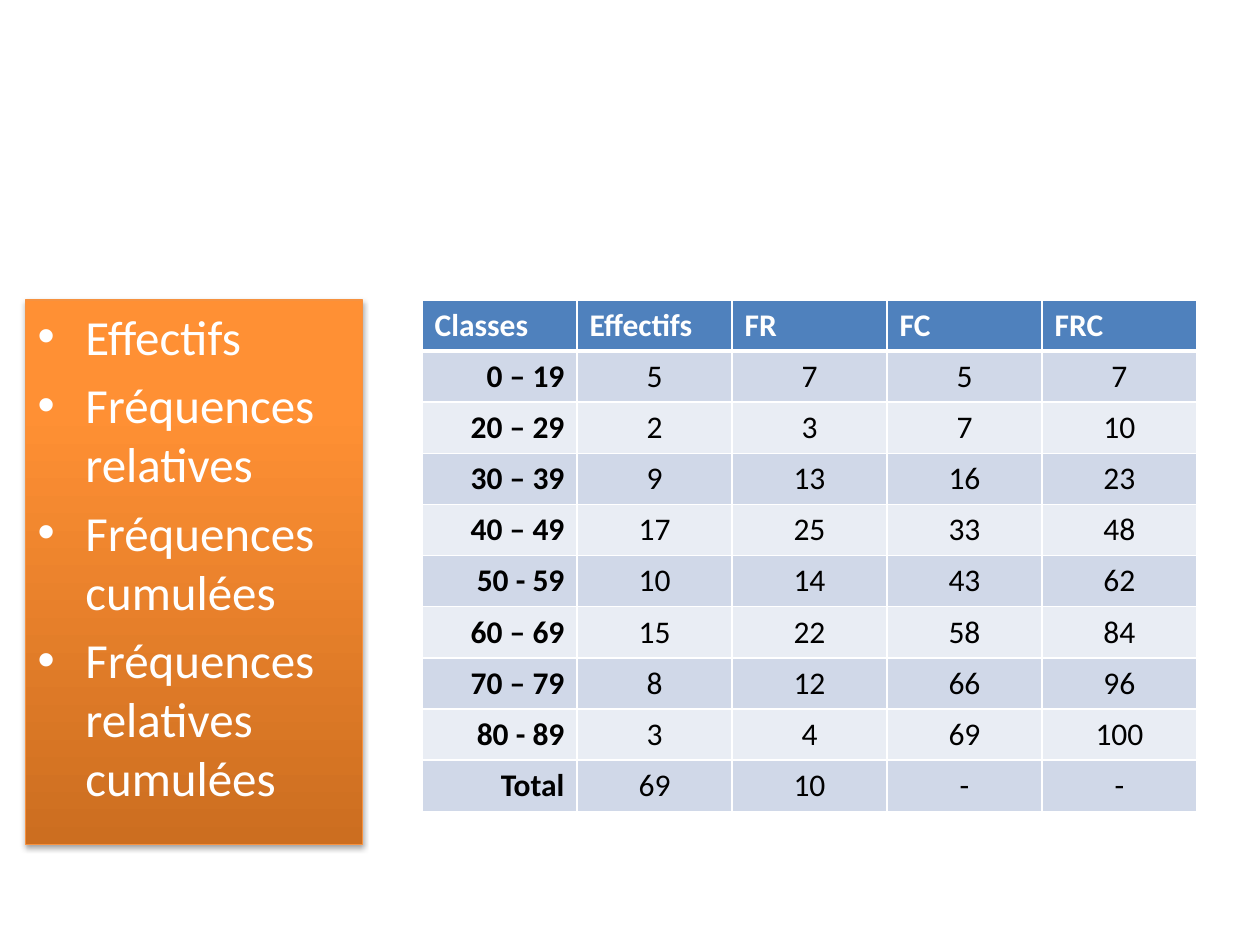
import copy

import lxml.etree
import pptx
import pptx.dml.color
import pptx.enum.shapes
import pptx.enum.text
import pptx.oxml
import pptx.oxml.ns
import pptx.util

Inches = pptx.util.Inches
Pt = pptx.util.Pt
Align = pptx.enum.text.PP_ALIGN

MEASURES = ["Effectifs", "Fréquences relatives", "Fréquences cumulées",
            "Fréquences relatives cumulées"]
HEADINGS = ["Classes", "Effectifs", "FR", "FC", "FRC"]
AGE_CLASSES = [
    ["0 – 19", "5", "7", "5", "7"],
    ["20 – 29", "2", "3", "7", "10"],
    ["30 – 39", "9", "13", "16", "23"],
    ["40 – 49", "17", "25", "33", "48"],
    ["50 - 59", "10", "14", "43", "62"],
    ["60 – 69", "15", "22", "58", "84"],
    ["70 – 79", "8", "12", "66", "96"],
    ["80 - 89", "3", "4", "69", "100"],
    ["Total", "69", "10", "-", "-"],
]


def color(hex_code):
    """Return the RGB colour for a hex string."""
    return pptx.dml.color.RGBColor.from_string(hex_code)


def add_xml(parent, tag, **attributes):
    """Append a DrawingML element to parent and return it."""
    return lxml.etree.SubElement(parent, pptx.oxml.ns.qn(f"a:{tag}"), attributes)


def write(paragraph, text, size=18, ink="000000", bold=False, align=Align.LEFT):
    """Put formatted text into a paragraph."""
    paragraph.alignment = align
    run = paragraph.add_run()
    run.text = text
    run.font.name = "Calibri"
    run.font.size = Pt(size)
    run.font.bold = bold
    run.font.color.rgb = color(ink)


def add_bullet(paragraph):
    """Give a paragraph a hanging bullet and proportional space before."""
    properties = paragraph._p.get_or_add_pPr()
    properties.set("marL", str(Inches(0.38)))
    properties.set("indent", str(-Inches(0.38)))
    add_xml(add_xml(properties, "spcBef"), "spcPct", val="20000")
    add_xml(properties, "buFont", typeface="Arial")
    add_xml(properties, "buChar", char="•")


def fill_gradient(fill, stops, angle):
    """Fill with a linear gradient of (position, hex) stops."""
    fill.gradient()
    fill.gradient_angle = angle
    stop_list = fill.gradient_stops[0]._gs.getparent()
    while len(stop_list) < len(stops):
        stop_list.append(copy.deepcopy(stop_list[0]))
    for stop, (position, hex_code) in zip(fill.gradient_stops, stops):
        stop.position = position
        stop.color.rgb = color(hex_code)


def add_shadow(shape):
    """Give a shape a soft shadow below it."""
    shape.shadow.inherit = False
    effects = shape._element.spPr.find(pptx.oxml.ns.qn("a:effectLst"))
    shadow = add_xml(effects, "outerShdw", blurRad=str(Pt(3.1)), dist=str(Pt(1.8)),
                     dir="5400000", rotWithShape="0")
    add_xml(add_xml(shadow, "srgbClr", val="000000"), "alpha", val="35000")


def add_measures(slide, left, top, width, height):
    """Place the orange panel listing the measures."""
    panel = slide.shapes.add_shape(pptx.enum.shapes.MSO_SHAPE.RECTANGLE,
                                   left, top, width, height)
    fill_gradient(panel.fill, [(0, "CC6E20"), (0.8, "FF9034"), (1, "FF9136")], 90)
    panel.line.color.rgb = color("F69240")
    panel.line.width = Pt(0.75)
    add_shadow(panel)
    frame = panel.text_frame
    frame.word_wrap = True
    frame.vertical_anchor = pptx.enum.text.MSO_ANCHOR.TOP
    for index, measure in enumerate(MEASURES):
        paragraph = frame.add_paragraph() if index else frame.paragraphs[0]
        write(paragraph, measure, size=28, ink="FFFFFF")
        add_bullet(paragraph)


def set_borders(cell, **widths):
    """Draw white cell borders, with widths in points by side."""
    properties = cell._tc.get_or_add_tcPr()
    for side in "LRTB":
        border = add_xml(properties, f"ln{side}", w=str(Pt(widths.get(side, 1))))
        add_xml(add_xml(border, "solidFill"), "srgbClr", val="FFFFFF")


def add_frequencies(slide, left, top, width, height):
    """Place the frequency table with its header and banded rows."""
    rows = [HEADINGS] + AGE_CLASSES
    table = slide.shapes.add_table(len(rows), len(HEADINGS),
                                   left, top, width, height).table
    for row, values in enumerate(rows):
        for column, value in enumerate(values):
            cell = table.cell(row, column)
            paragraph = cell.text_frame.paragraphs[0]
            if row == 0:
                band = "4F81BD"
                write(paragraph, value, ink="FFFFFF", bold=True)
                set_borders(cell, B=3)
            else:
                band = "D0D8E8" if row % 2 else "E9EDF4"
                write(paragraph, value, bold=column == 0,
                      align=Align.CENTER if column else Align.RIGHT)
                set_borders(cell, T=3 if row == 1 else 1)
            cell.fill.solid()
            cell.fill.fore_color.rgb = color(band)


def main():
    """Build and save the slide."""
    presentation = pptx.Presentation()
    presentation.slide_width = Inches(10)
    presentation.slide_height = Inches(7.5)
    slide = presentation.slides.add_slide(presentation.slide_layouts[6])
    add_measures(slide, Inches(0.2), Inches(2.38), Inches(2.68), Inches(4.32))
    add_frequencies(slide, Inches(3.35), Inches(2.38), Inches(6.15), Inches(4.06))
    presentation.save("out.pptx")


if __name__ == "__main__":
    main()
